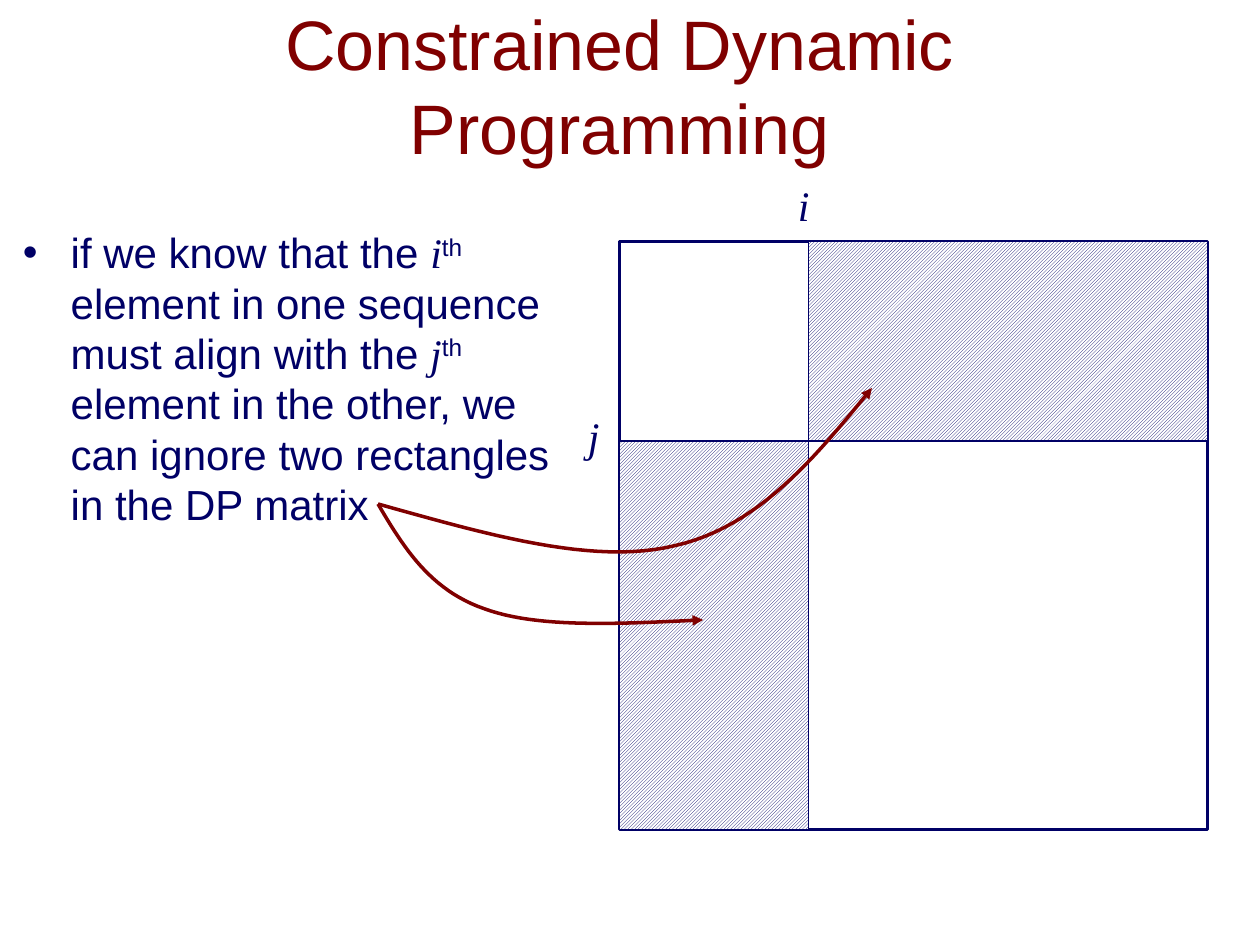
import pptx
import pptx.dml.color
import pptx.enum.dml
import pptx.enum.shapes
import pptx.enum.text
import pptx.oxml.ns
import pptx.util
import lxml.etree

UNIT = pptx.util.Inches(10) // 120
NAVY, MAROON, WHITE = "000066", "800000", "FFFFFF"
PLAIN = {"name": "Arial", "italic": False}
SYMBOL = {"name": "Times New Roman", "italic": True}
LEFT, TOP, RIGHT, BOTTOM = 59, 23, 115, 79
SPLIT_COLUMN, SPLIT_ROW = 77, 42


def colour(value):
    return pptx.dml.color.RGBColor.from_string(value)


def grid(*cells):
    return [round(cell * UNIT) for cell in cells]


def apply_format(target, values):
    for name, value in values.items():
        setattr(target, name, value)


def add_xml(parent, tag, **attributes):
    return lxml.etree.SubElement(parent, pptx.oxml.ns.qn(tag), attributes)


def add_span(para, text, size, ink, style, raised=False):
    span = para.add_run()
    span.text = text
    apply_format(span.font, {"size": pptx.util.Pt(size), **style})
    span.font.color.rgb = colour(ink)
    if raised:
        span.font._element.set("baseline", "30000")


def add_text(page, cells, spans, size, ink, frame_format, para_format):
    box = page.shapes.add_textbox(*grid(*cells))
    apply_format(box.text_frame, frame_format)
    para = box.text_frame.paragraphs[0]
    apply_format(para, para_format)
    for span in spans:
        add_span(para, span[0], size, ink, *span[1:])
    return para


def add_bullet(para, indent):
    properties = para._p.get_or_add_pPr()
    properties.set("marL", str(indent))
    properties.set("indent", str(-indent))
    add_xml(properties, "a:buFont", typeface="Arial")
    add_xml(properties, "a:buChar", char="•")


def add_label(page, text, column, row):
    add_text(page, (column, row, 3.5, 6), [(text, SYMBOL)], 24, NAVY,
             {"word_wrap": False,
              "auto_size": pptx.enum.text.MSO_AUTO_SIZE.SHAPE_TO_FIT_TEXT}, {})


def add_region(group, left, top, right, bottom, width=0.75, hatched=False):
    region = group.shapes.add_shape(pptx.enum.shapes.MSO_SHAPE.RECTANGLE,
                                    *grid(left, top, right - left, bottom - top))
    region.shadow.inherit = False
    region.line.color.rgb = colour(NAVY)
    region.line.width = pptx.util.Pt(width)
    if hatched:
        region.fill.patterned()
        region.fill.pattern = pptx.enum.dml.MSO_PATTERN.LIGHT_UPWARD_DIAGONAL
        region.fill.fore_color.rgb = colour(NAVY)
        region.fill.back_color.rgb = colour(WHITE)
    else:
        region.fill.background()


def add_matrix(page):
    group = page.shapes.add_group_shape()
    add_region(group, LEFT, TOP, RIGHT, BOTTOM, width=2)
    add_region(group, LEFT, TOP, SPLIT_COLUMN, SPLIT_ROW)
    add_region(group, LEFT, SPLIT_ROW, SPLIT_COLUMN, BOTTOM, hatched=True)
    add_region(group, SPLIT_COLUMN, TOP, RIGHT, SPLIT_ROW, hatched=True)


def bezier_points(knots, steps=24):
    for first in range(0, len(knots) - 1, 3):
        corners = knots[first:first + 4]
        for step in range(1, steps + 1):
            t = step / steps
            weights = ((1 - t) ** 3, 3 * t * (1 - t) ** 2, 3 * t * t * (1 - t), t ** 3)
            yield tuple(round(pptx.util.Inches(sum(w * c for w, c in zip(weights, axis))))
                        for axis in zip(*corners))


def add_curved_arrow(page, knots):
    start = [pptx.util.Inches(value) for value in knots[0]]
    builder = page.shapes.build_freeform(*start)
    builder.add_line_segments(list(bezier_points(knots)), close=False)
    arrow = builder.convert_to_shape()
    arrow.shadow.inherit = False
    arrow.fill.background()
    arrow.line.color.rgb = colour(MAROON)
    arrow.line.width = pptx.util.Pt(2)
    add_xml(arrow.line._get_or_add_ln(), "a:tailEnd", type="triangle")


def main():
    deck = pptx.Presentation()
    deck.slide_width, deck.slide_height = grid(120, 90)
    page = deck.slides.add_slide(deck.slide_layouts[6])
    add_text(page, (8, 3, 102, 10), [("Constrained Dynamic Programming", PLAIN)], 40, MAROON,
             {"word_wrap": True, "vertical_anchor": pptx.enum.text.MSO_ANCHOR.MIDDLE},
             {"alignment": pptx.enum.text.PP_ALIGN.CENTER})
    add_matrix(page)
    spans = [
        ("if we know that the ", PLAIN), ("i", SYMBOL), ("th", PLAIN, True),
        (" element in one sequence must align with the ", PLAIN),
        ("j", SYMBOL), ("th", PLAIN, True),
        (" element in the other, we can ignore two rectangles in the DP matrix", PLAIN),
    ]
    para = add_text(page, (1, 21, 55, 54), spans, 24, NAVY, {"word_wrap": True},
                    {"space_before": pptx.util.Pt(4.8)})
    add_bullet(para, pptx.util.Inches(0.38))
    add_label(page, "i", SPLIT_COLUMN - 2.2, 16.5)
    add_label(page, "j", LEFT - 4.2, SPLIT_ROW - 3.5)
    add_curved_arrow(page, [(3, 4), (3.2, 4.34), (3.41, 4.68), (3.84, 4.83),
                            (4.27, 4.99), (4.93, 4.95), (5.58, 4.92)])
    add_curved_arrow(page, [(3, 4), (3.86, 4.24), (4.71, 4.49), (5.36, 4.33),
                            (6.02, 4.18), (6.47, 3.63), (6.92, 3.08)])
    deck.save("out.pptx")


if __name__ == "__main__":
    main()
